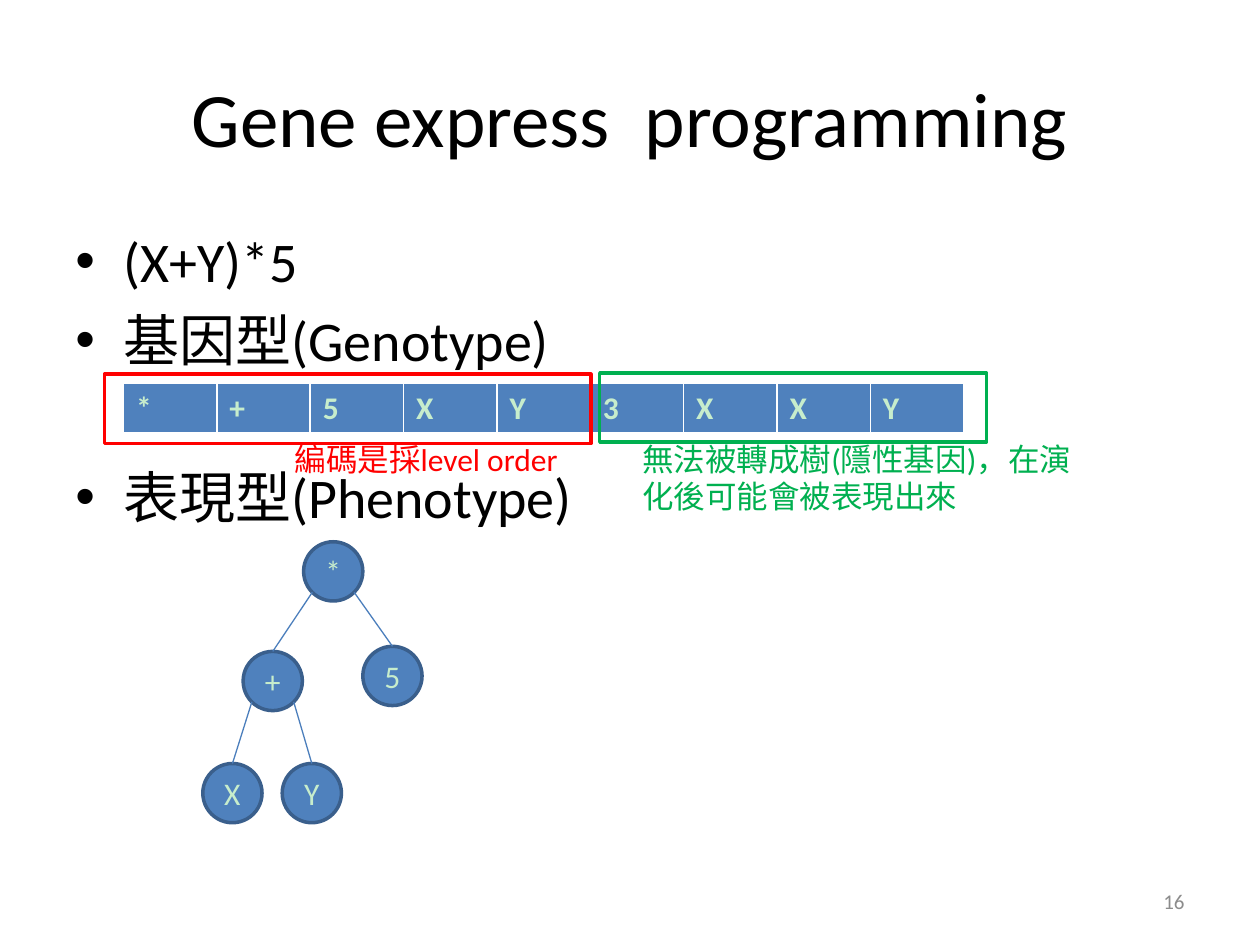
from lxml.etree import SubElement as Sub
from pptx import Presentation
from pptx.dml.color import RGBColor as Rgb
from pptx.enum.shapes import MSO_CONNECTOR as Link, MSO_SHAPE as Kind
from pptx.enum.text import MSO_ANCHOR as Anchor, PP_ALIGN as Align
from pptx.oxml.ns import qn
from pptx.util import Inches, Pt

HUES = {
    "page": "FFFFFF", "ink": "000000", "mint": "C7EDCC", "blue": "4F81BD",
    "edge": "3A5F8C", "link": "4B7EBC", "red": "FF0000", "green": "00B050",
    "gray": "8C8C8C",
}
COLS, ROWS = 100, 75


def hue(name):
    return Rgb.from_string(HUES[name])


class Board:
    def __init__(self, deck):
        self.wide, self.high = deck.slide_width, deck.slide_height
        self.slide = deck.slides.add_slide(deck.slide_layouts[6])
        self.shapes = self.slide.shapes
        back = self.slide.background.fill
        back.solid()
        back.fore_color.rgb = hue("page")

    def x(self, col):
        return round(self.wide * col / COLS)

    def y(self, row):
        return round(self.high * row / ROWS)

    def area(self, col, row, wide, high):
        return self.x(col), self.y(row), self.x(wide), self.y(high)

    def label(self, para, text, size, tone, **form):
        run = para.add_run()
        run.text = text
        for key, val in {"name": "Calibri", "size": Pt(size), **form}.items():
            setattr(run.font, key, val)
        run.font.color.rgb = hue(tone)

    def text(self, spot, lines, size, tone, align=Align.LEFT, anchor=Anchor.TOP):
        frame = self.shapes.add_textbox(*self.area(*spot)).text_frame
        for key, val in {"word_wrap": True, "vertical_anchor": anchor}.items():
            setattr(frame, key, val)
        paras = [frame.paragraphs[0]] + [frame.add_paragraph() for _ in lines[1:]]
        for para, line in zip(paras, lines):
            para.alignment = align
            self.label(para, line, size, tone)
        return paras

    def bullets(self, spot, items, size, tone):
        paras = self.text(spot, [line for line, _ in items], size, tone)
        for para, (_, gap) in zip(paras, items):
            para.space_before = Pt(gap)
            props = para._p.get_or_add_pPr()
            props.set("marL", str(Inches(0.38)))
            props.set("indent", str(-Inches(0.38)))
            Sub(props, qn("a:buFont"), typeface="Arial")
            Sub(props, qn("a:buChar"), char="•")

    def shape(self, kind, spot, line, fill=None):
        item = self.shapes.add_shape(kind, *self.area(*spot))
        item.shadow.inherit = False
        if fill:
            item.fill.solid()
            item.fill.fore_color.rgb = hue(fill)
        else:
            item.fill.background()
        item.line.color.rgb = hue(line)
        item.line.width = Pt(2)
        return item

    def node(self, text, col, row, size=4.7):
        item = self.shape(Kind.FLOWCHART_CONNECTOR, (col, row, size, size), "edge", "blue")
        item.text_frame.vertical_anchor = Anchor.MIDDLE
        para = item.text_frame.paragraphs[0]
        para.alignment = Align.CENTER
        self.label(para, text, 18, "mint")
        return item

    def branch(self, top, low):
        side = 1 if low.left > top.left else -1
        reach = top.width * 0.5 ** 1.5
        start_x = round(top.left + top.width / 2 + side * reach)
        start_y = round(top.top + top.height / 2 + reach)
        line = self.shapes.add_connector(Link.STRAIGHT, start_x, start_y, low.left, low.top)
        line.end_connect(low, 0)
        line.line.color.rgb = hue("link")
        line.line.width = Pt(0.75)
        Sub(line._element.spPr, qn("a:effectLst"))

    def table(self, spot, items):
        grid = self.shapes.add_table(1, len(items), *self.area(*spot)).table
        for col, text in enumerate(items):
            grid.columns[col].width = self.x(spot[2] / len(items))
            cell = grid.cell(0, col)
            self.label(cell.text_frame.paragraphs[0], text, 18, "mint", bold=True)
            props = cell._tc.get_or_add_tcPr()
            for side, thick in {"L": 1, "R": 1, "T": 1, "B": 3}.items():
                edge = Sub(props, qn(f"a:ln{side}"), w=str(Pt(thick)))
                Sub(Sub(edge, qn("a:solidFill")), qn("a:srgbClr"), val=HUES["page"])
            cell.fill.solid()
            cell.fill.fore_color.rgb = hue("blue")


def main():
    deck = Presentation()
    deck.slide_width, deck.slide_height = Inches(10), Inches(7.5)
    board = Board(deck)

    board.text((5, 3, 90, 12.5), ["Gene express  programming"], 44, "ink",
               Align.CENTER, Anchor.MIDDLE)
    board.bullets((5, 17.5, 90, 49.5), [
        ("(X+Y)*5", 6.4), ("基因型(Genotype)", 6.4), ("表現型(Phenotype)", 51.5),
    ], 32, "ink")

    root = board.node("*", 24.1, 43)
    plus = board.node("+", 19.3, 51.7)
    five = board.node("5", 28.8, 51.3)
    left = board.node("X", 16.1, 60.6)
    right = board.node("Y", 22.4, 60.6)
    for top, low in [(root, plus), (plus, left), (plus, right), (root, five)]:
        board.branch(top, low)

    board.table((9.8, 30.4, 66.7, 4.1), "*+5XY3XXY")
    notes = [
        ("red", (8.3, 29.7, 38.6, 5.5), (22.4, 34.4, 24, 4), "編碼是採level order"),
        ("green", (47.6, 29.6, 30.7, 5.5), (50, 34.4, 36.2, 7.1),
         "無法被轉成樹(隱性基因)，在演化後可能會被表現出來"),
    ]
    for tone, box, spot, line in notes:
        board.shape(Kind.RECTANGLE, box, tone)
        board.text(spot, [line], 18, tone)

    board.text((71.7, 69.5, 23.3, 4), ["16"], 12, "gray", Align.RIGHT, Anchor.MIDDLE)
    deck.save("out.pptx")


if __name__ == "__main__":
    main()
